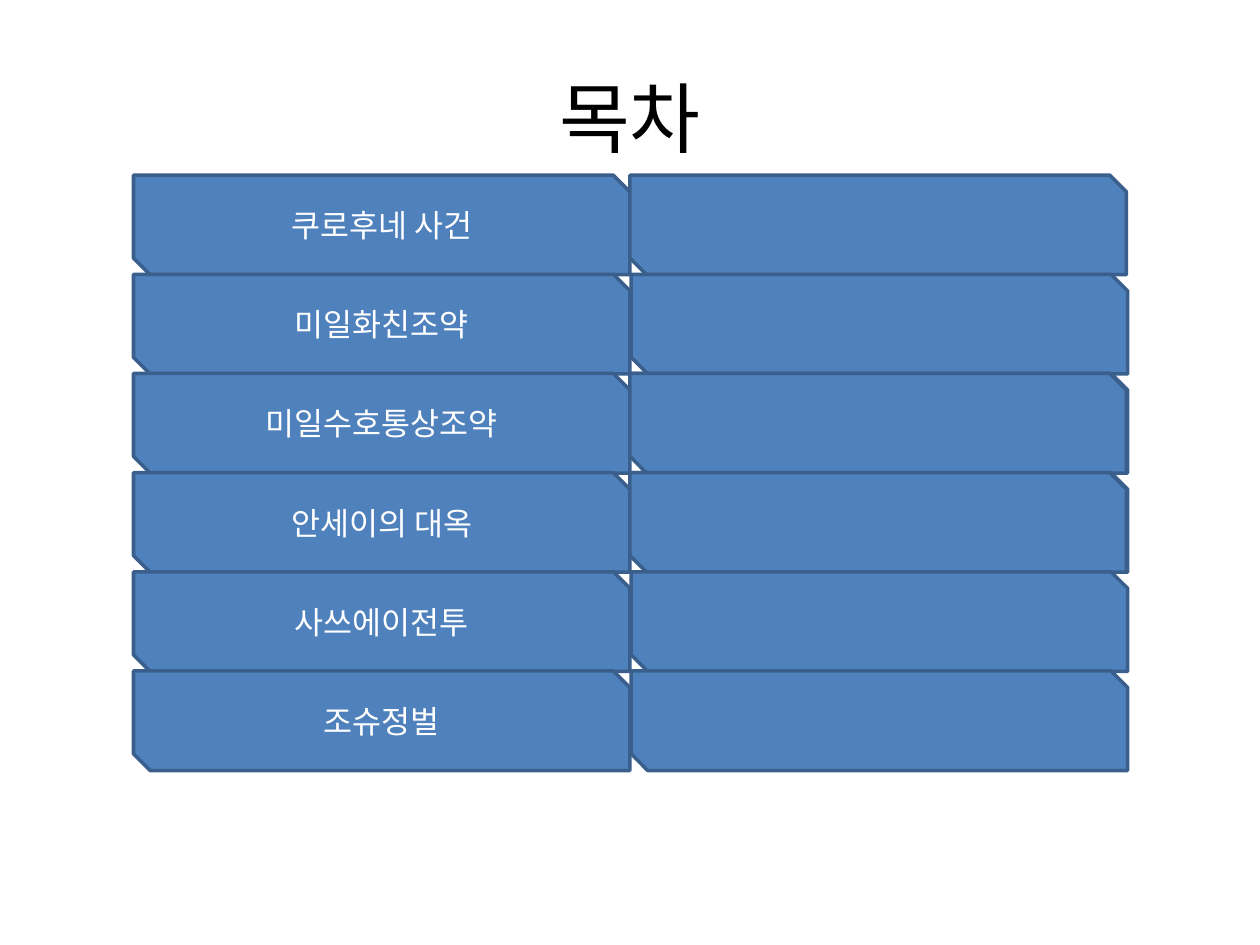
import pptx
import pptx.util
from pptx.dml.color import RGBColor
from pptx.enum.shapes import MSO_SHAPE
from pptx.enum.text import MSO_ANCHOR, PP_ALIGN
from pptx.oxml.ns import qn
from pptx.util import Inches

BLACK = RGBColor(0x00, 0x00, 0x00)
WHITE = RGBColor(0xFF, 0xFF, 0xFF)
BLUE = RGBColor(0x4F, 0x81, 0xBD)
DARK_BLUE = RGBColor(0x3A, 0x5F, 0x8C)

FONT = "Noto Sans CJK KR"
TOPICS = [
    "쿠로후네 사건",
    "미일화친조약",
    "미일수호통상조약",
    "안세이의 대옥",
    "사쓰에이전투",
    "조슈정벌",
]

LEFT, TOP = 1.06, 1.39
BAR_WIDTH, BAR_HEIGHT = 3.94, 0.79
ROW_STEP = 0.787
COVER_LEFT = LEFT + BAR_WIDTH
OFFSET_COVER_LEFT = COVER_LEFT + 0.01
DOUBLED_ROWS = (2, 3)


def write_text(shape, text, size, color):
    """Write one centred paragraph, with the font set for Latin and Korean."""
    frame = shape.text_frame
    frame.text = text
    frame.word_wrap = True
    frame.vertical_anchor = MSO_ANCHOR.MIDDLE
    paragraph = frame.paragraphs[0]
    paragraph.alignment = PP_ALIGN.CENTER
    paragraph.font.name = FONT
    paragraph.font.size = pptx.util.Pt(size)
    paragraph.font.color.rgb = color
    properties = paragraph._p.get_or_add_pPr().find(qn("a:defRPr"))
    east_asian = properties.makeelement(qn("a:ea"), {"typeface": FONT})
    properties.find(qn("a:latin")).addnext(east_asian)


def add_title(slide, text):
    title = slide.shapes.title
    title.left, title.top = Inches(0.5), Inches(0.3)
    title.width, title.height = Inches(9), Inches(1.25)
    write_text(title, text, 44, BLACK)


def add_bar(slide, left, row):
    bar = slide.shapes.add_shape(
        MSO_SHAPE.SNIP_2_DIAG_RECTANGLE,
        Inches(left), Inches(TOP + row * ROW_STEP),
        Inches(BAR_WIDTH), Inches(BAR_HEIGHT),
    )
    bar.shadow.inherit = False
    bar.fill.solid()
    bar.fill.fore_color.rgb = BLUE
    bar.line.color.rgb = DARK_BLUE
    bar.line.width = pptx.util.Pt(2)
    return bar


def main():
    presentation = pptx.Presentation()
    presentation.slide_width, presentation.slide_height = Inches(10), Inches(7.5)
    slide = presentation.slides.add_slide(presentation.slide_layouts[5])
    add_title(slide, "목차")
    for row, topic in enumerate(TOPICS):
        write_text(add_bar(slide, LEFT, row), topic, 18, WHITE)
    for row in range(len(TOPICS)):
        add_bar(slide, OFFSET_COVER_LEFT if row else COVER_LEFT, row)
        if row in DOUBLED_ROWS:
            add_bar(slide, COVER_LEFT, row)
    presentation.save("out.pptx")


if __name__ == "__main__":
    main()
